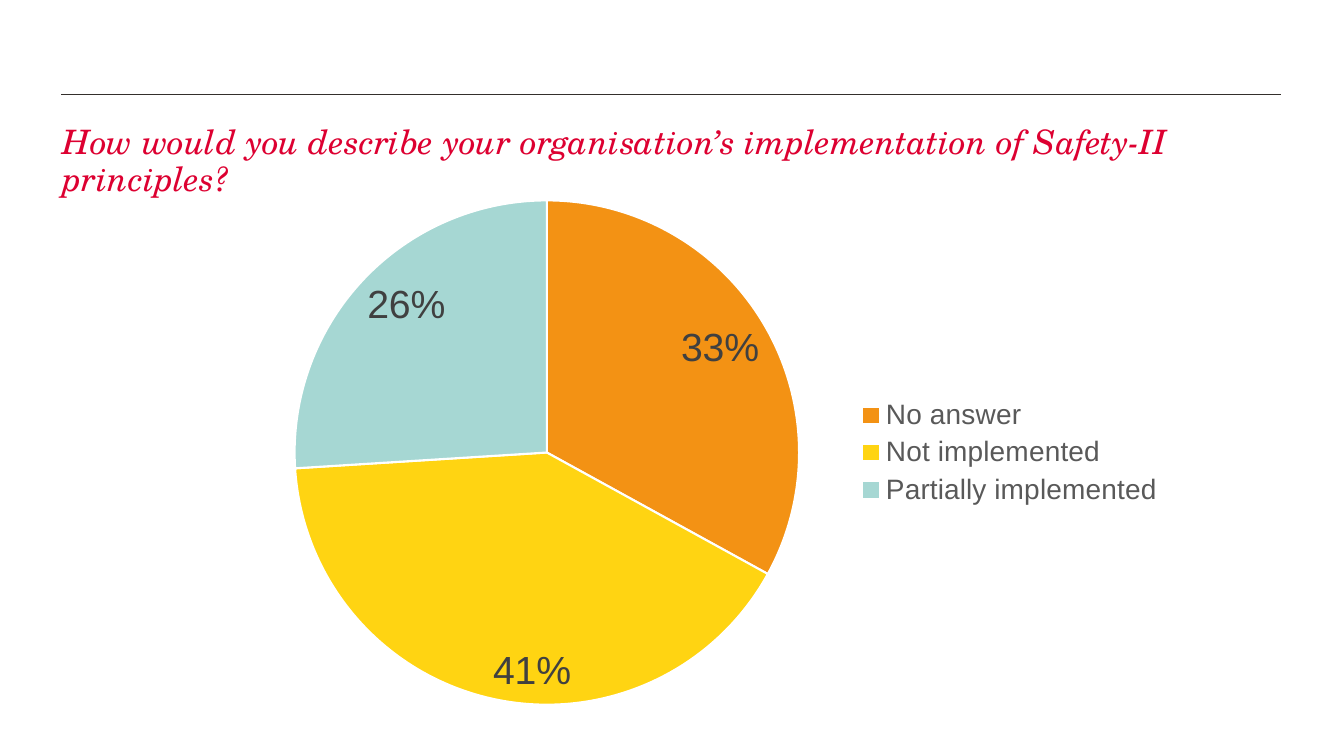
from dataclasses import dataclass

from lxml.etree import SubElement
from pptx import Presentation
from pptx.chart.data import CategoryChartData
from pptx.dml.color import RGBColor
from pptx.enum.chart import XL_CHART_TYPE, XL_LABEL_POSITION, XL_LEGEND_POSITION
from pptx.enum.shapes import MSO_CONNECTOR
from pptx.enum.text import MSO_ANCHOR
from pptx.oxml.ns import qn
from pptx.util import Inches, Pt


@dataclass(frozen=True)
class Theme:
    """Colours, fonts and type sizes of the slide."""
    rule: str = "342F2C"
    title: str = "DD0031"
    label: str = "404040"
    legend: str = "595959"
    border: str = "FFFFFF"
    title_font: str = "TeX Gyre Schola"
    chart_font: str = "Arial"
    title_size: int = 24
    label_size: int = 28
    legend_size: int = 20
    chart_size: int = 10


THEME = Theme()
ANSWERS = [
    ("No answer", 33, "F39214"),
    ("Not implemented", 41, "FFD412"),
    ("Partially implemented", 26, "A6D7D3"),
]


def style_font(font, name, size, colour):
    """Set the typeface, size and colour of a font."""
    font.name = name
    font.size = Pt(size)
    font.color.rgb = RGBColor.from_string(colour)


def add_rule(page, left, right, top):
    """Draw a thin horizontal line."""
    rule = page.shapes.add_connector(
        MSO_CONNECTOR.STRAIGHT, Inches(left), Inches(top), Inches(right), Inches(top))
    rule.line.color.rgb = RGBColor.from_string(THEME.rule)
    rule.line.width = Pt(0.5)
    SubElement(rule.element.spPr, qn("a:effectLst"))


def add_title(page, text, left, top, width, height):
    """Write the question in italics."""
    box = page.shapes.add_textbox(Inches(left), Inches(top), Inches(width), Inches(height))
    frame = box.text_frame
    frame.word_wrap = True
    frame.vertical_anchor = MSO_ANCHOR.TOP
    frame.text = text
    para = frame.paragraphs[0]
    para.line_spacing = 0.9
    span = para.runs[0]
    style_font(span.font, THEME.title_font, THEME.title_size, THEME.title)
    span.font.italic = True


def add_pie(page, answers, left, top, width, height):
    """Draw the share of each answer as a pie with a legend."""
    data = CategoryChartData()
    data.categories = [name for name, _, _ in answers]
    data.add_series("Series 1", [share for _, share, _ in answers])
    chart = page.shapes.add_chart(
        XL_CHART_TYPE.PIE, Inches(left), Inches(top), Inches(width), Inches(height), data).chart
    chart.has_title = False
    style_font(chart.font, THEME.chart_font, THEME.chart_size, "000000")

    chart.has_legend = True
    chart.legend.position = XL_LEGEND_POSITION.RIGHT
    chart.legend.include_in_layout = False
    style_font(chart.legend.font, THEME.chart_font, THEME.legend_size, THEME.legend)

    plot = chart.plots[0]
    plot.vary_by_categories = True
    series = plot.series[0]
    for index, (_, _, colour) in enumerate(answers):
        slice_format = series.points[index].format
        slice_format.fill.solid()
        slice_format.fill.fore_color.rgb = RGBColor.from_string(colour)
        slice_format.line.color.rgb = RGBColor.from_string(THEME.border)
        slice_format.line.width = Pt(1.5)

    labels = series.data_labels
    labels.show_value = False
    labels.show_percentage = True
    labels.number_format = "0%"
    labels.number_format_is_linked = False
    labels.position = XL_LABEL_POSITION.INSIDE_END
    style_font(labels.font, THEME.chart_font, THEME.label_size, THEME.label)


def main():
    """Build and save the slide."""
    deck = Presentation()
    deck.slide_width, deck.slide_height = Inches(13.33), Inches(7.5)
    page = deck.slides.add_slide(deck.slide_layouts[6])
    add_rule(page, 0.61, 12.71, 0.94)
    add_title(
        page,
        "How would you describe your organisation’s implementation of Safety-II principles?",
        0.52, 1.2, 12.19, 0.65)
    add_pie(page, ANSWERS, 2.38, 1.85, 9.27, 5.28)
    deck.save("out.pptx")


if __name__ == "__main__":
    main()
